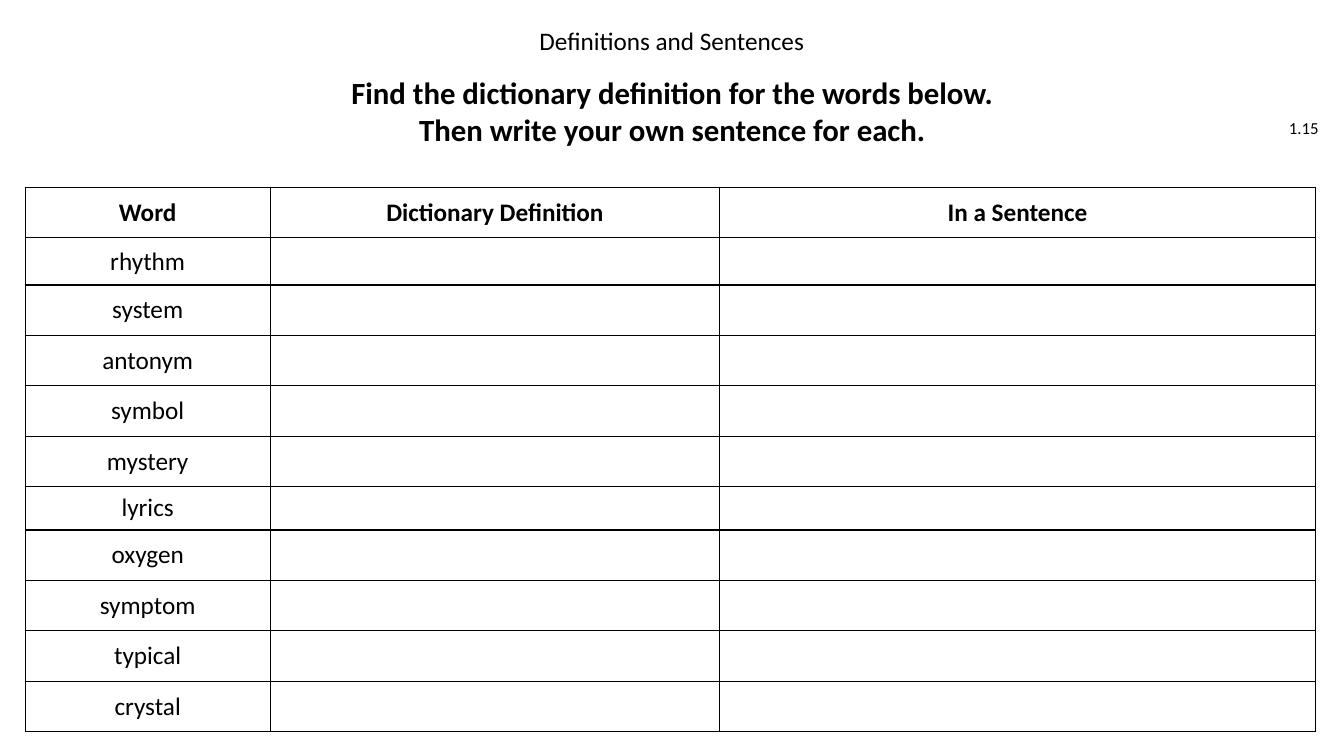
"""Build a vocabulary worksheet slide with a table for definitions and sentences."""
from lxml import etree
from pptx import Presentation
from pptx.dml.color import RGBColor
from pptx.enum.text import MSO_ANCHOR, PP_ALIGN
from pptx.oxml.ns import qn
from pptx.util import Pt

CENTER, RIGHT = PP_ALIGN.CENTER, PP_ALIGN.RIGHT
TOP, MIDDLE = MSO_ANCHOR.TOP, MSO_ANCHOR.MIDDLE
BLACK = RGBColor(0, 0, 0)
FONT = "Calibri"

HEADING = ["Definitions and Sentences"]
INSTRUCTIONS = ["Find the dictionary definition for the words below.",
                "Then write your own sentence for each."]
LESSON_NUMBER = ["1.15"]
HEADERS = ["Word", "Dictionary Definition", "In a Sentence"]
WORDS = ["rhythm", "system", "antonym", "symbol", "mystery",
         "lyrics", "oxygen", "symptom", "typical", "crystal"]

TABLE_LEFT, TABLE_TOP = 18, 133.8
COLUMN_WIDTHS = [175, 321.2, 425.4]
ROW_HEIGHT = 36
SHORT_ROWS = {"rhythm": 33.8, "lyrics": 31}


def style_paragraph(paragraph, size, alignment=CENTER, bold=False):
    paragraph.alignment = alignment
    paragraph.font.name = FONT
    paragraph.font.size = Pt(size)
    paragraph.font.bold = bold
    paragraph.font.color.rgb = BLACK


def add_text(slide, lines, box, size, anchor, alignment=CENTER, bold=False, first_spacing=1.0):
    frame = slide.shapes.add_textbox(*map(Pt, box)).text_frame
    frame.word_wrap = True
    frame.vertical_anchor = anchor
    frame.text = "\n".join(lines)
    for paragraph in frame.paragraphs:
        style_paragraph(paragraph, size, alignment, bold)
    frame.paragraphs[0].line_spacing = first_spacing


def add_borders(cell):
    properties = cell._tc.get_or_add_tcPr()
    for position, side in enumerate(("a:lnL", "a:lnR", "a:lnT", "a:lnB")):
        line = etree.Element(qn(side), w=str(Pt(1)))
        fill = etree.SubElement(line, qn("a:solidFill"))
        etree.SubElement(fill, qn("a:srgbClr"), val=str(BLACK))
        properties.insert(position, line)


def add_word_table(slide):
    rows = [HEADERS] + [[word, "", ""] for word in WORDS]
    heights = [SHORT_ROWS.get(row[0], ROW_HEIGHT) for row in rows]
    table = slide.shapes.add_table(
        len(rows), len(HEADERS), Pt(TABLE_LEFT), Pt(TABLE_TOP),
        Pt(sum(COLUMN_WIDTHS)), Pt(sum(heights))).table
    table.first_row = table.horz_banding = False
    for column, width in zip(table.columns, COLUMN_WIDTHS):
        column.width = Pt(width)
    for row_index, (row, height) in enumerate(zip(rows, heights)):
        table.rows[row_index].height = Pt(height)
        for column_index, text in enumerate(row):
            cell = table.cell(row_index, column_index)
            cell.text = text
            cell.vertical_anchor = MIDDLE
            cell.fill.background()
            style_paragraph(cell.text_frame.paragraphs[0], 18, bold=row_index == 0)
            add_borders(cell)


def main():
    presentation = Presentation()
    presentation.slide_width, presentation.slide_height = Pt(960), Pt(540)
    slide = presentation.slides.add_slide(presentation.slide_layouts[6])
    add_text(slide, LESSON_NUMBER, (903.6, 77, 45.4, 28.8), 12, MIDDLE, RIGHT)
    add_text(slide, INSTRUCTIONS, (141.8, 43.2, 676.8, 59), 22, MIDDLE,
             bold=True, first_spacing=1.5)
    add_text(slide, HEADING, (275, 16.6, 409.7, 25.2), 18, TOP, first_spacing=0.9)
    add_word_table(slide)
    presentation.save("out.pptx")


if __name__ == "__main__":
    main()
